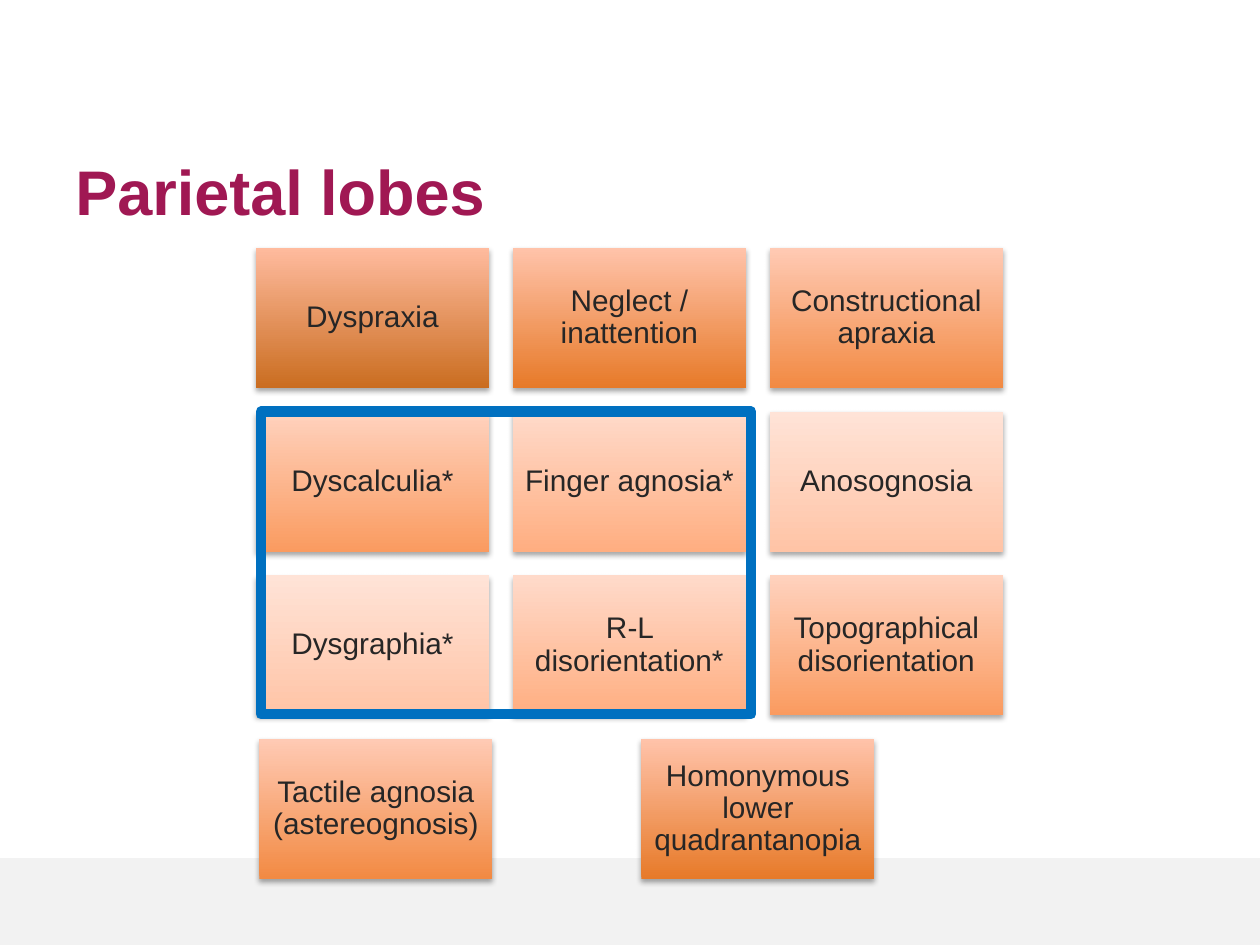
from dataclasses import dataclass

from lxml import etree
from pptx import Presentation
from pptx.dml.color import RGBColor
from pptx.enum.shapes import MSO_SHAPE
from pptx.enum.text import MSO_ANCHOR, PP_ALIGN
from pptx.oxml import parse_xml
from pptx.oxml.ns import nsdecls, qn
from pptx.util import Cm, Pt

RECTANGLE = MSO_SHAPE.RECTANGLE
MIDDLE, BOTTOM = MSO_ANCHOR.MIDDLE, MSO_ANCHOR.BOTTOM
CENTER, LEFT = PP_ALIGN.CENTER, PP_ALIGN.LEFT
BLANK_LAYOUT = 6


@dataclass(frozen=True)
class Theme:
    font: str = "Arial"
    title_size: int = 36
    tile_size: int = 17
    frame_width: int = 6
    title: str = "A01853"
    text: str = "262626"
    band: str = "F2F2F2"
    frame: str = "0070C0"
    # (bottom, top) gradient colours, from dark to light
    shades: tuple = (
        ("CA6D20", "FFBB9E"),
        ("E77A29", "FFC3AA"),
        ("F28A43", "FFCAB4"),
        ("FA9B60", "FFD2BE"),
        ("FFAE81", "FFDACA"),
        ("FFC4A6", "FFE3D7"),
    )


TILE_WIDTH, TILE_HEIGHT = 4.7, 2.82
COLUMNS = [5.16 + 5.18 * column for column in range(3)]
ROWS = [5 + 3.3 * row for row in range(4)]
LAST_ROW_COLUMNS = [5.23, 12.93]

# Each tile: label and index of its shade
SIGNS = [
    [("Dyspraxia", 0), ("Neglect / inattention", 1), ("Constructional apraxia", 2)],
    [("Dyscalculia*", 3), ("Finger agnosia*", 4), ("Anosognosia", 5)],
    [("Dysgraphia*", 5), ("R-L disorientation*", 4), ("Topographical disorientation", 3)],
    [("Tactile agnosia (astereognosis)", 2), ("Homonymous lower quadrantanopia", 1)],
]


class SlideBuilder:
    def __init__(self, slide, theme):
        self.slide = slide
        self.theme = theme

    def rectangle(self, left, top, width, height):
        box = self.slide.shapes.add_shape(
            RECTANGLE, Cm(left), Cm(top), Cm(width), Cm(height))
        box.shadow.inherit = False
        box.line.fill.background()
        return box

    def set_text(self, box, text, size, color, align, anchor, bold=False):
        frame = box.text_frame
        frame.word_wrap = True
        frame.vertical_anchor = anchor
        frame.text = text
        para = frame.paragraphs[0]
        para.alignment = align
        font = para.runs[0].font
        font.name, font.size, font.bold = self.theme.font, Pt(size), bold
        font.color.rgb = RGBColor.from_string(color)
        return frame

    def band(self, top, height):
        box = self.rectangle(0, top, 25.4, height)
        box.fill.solid()
        box.fill.fore_color.rgb = RGBColor.from_string(self.theme.band)

    def title(self, text):
        box = self.slide.shapes.add_textbox(Cm(1.27), Cm(2.84), Cm(21.77), Cm(1.88))
        self.set_text(box, text, self.theme.title_size, self.theme.title,
                      LEFT, BOTTOM, bold=True)

    def drop_shadow(self, box):
        effects = box._element.spPr.find(qn("a:effectLst"))
        effects.append(parse_xml(
            f'<a:outerShdw {nsdecls("a")} blurRad="{Pt(3.1)}" dist="{Pt(1.8)}" '
            'dir="5400000" rotWithShape="0"><a:srgbClr val="000000">'
            '<a:alpha val="35000"/></a:srgbClr></a:outerShdw>'))

    def tile(self, left, top, text, shade):
        box = self.rectangle(left, top, TILE_WIDTH, TILE_HEIGHT)
        box.fill.gradient()
        box.fill.gradient_angle = 90
        for stop, color in zip(box.fill.gradient_stops, self.theme.shades[shade]):
            stop.color.rgb = RGBColor.from_string(color)
        self.drop_shadow(box)
        frame = self.set_text(box, text, self.theme.tile_size, self.theme.text,
                              CENTER, MIDDLE)
        frame.margin_left = frame.margin_right = Cm(0.17)
        frame.margin_top = frame.margin_bottom = Cm(0.17)
        frame.paragraphs[0].line_spacing = 0.9

    def highlight(self, left, top, width, height):
        """Draw an unfilled outline with rounded corners."""
        box = self.rectangle(left, top, width, height)
        box.fill.background()
        box.line.color.rgb = RGBColor.from_string(self.theme.frame)
        box.line.width = Pt(self.theme.frame_width)
        etree.SubElement(box._element.spPr.find(qn("a:ln")), qn("a:round"))


def main():
    deck = Presentation()
    deck.slide_width, deck.slide_height = Cm(25.4), Cm(19.05)
    slide = deck.slides.add_slide(deck.slide_layouts[BLANK_LAYOUT])
    page = SlideBuilder(slide, Theme())

    page.band(17.3, 1.75)
    page.title("Parietal lobes")
    for top, signs in zip(ROWS, SIGNS):
        columns = COLUMNS if len(signs) == len(COLUMNS) else LAST_ROW_COLUMNS
        for left, (text, shade) in zip(columns, signs):
            page.tile(left, top, text, shade)
    page.highlight(5.26, ROWS[1], 9.88, 6.1)

    deck.save("out.pptx")


if __name__ == "__main__":
    main()
